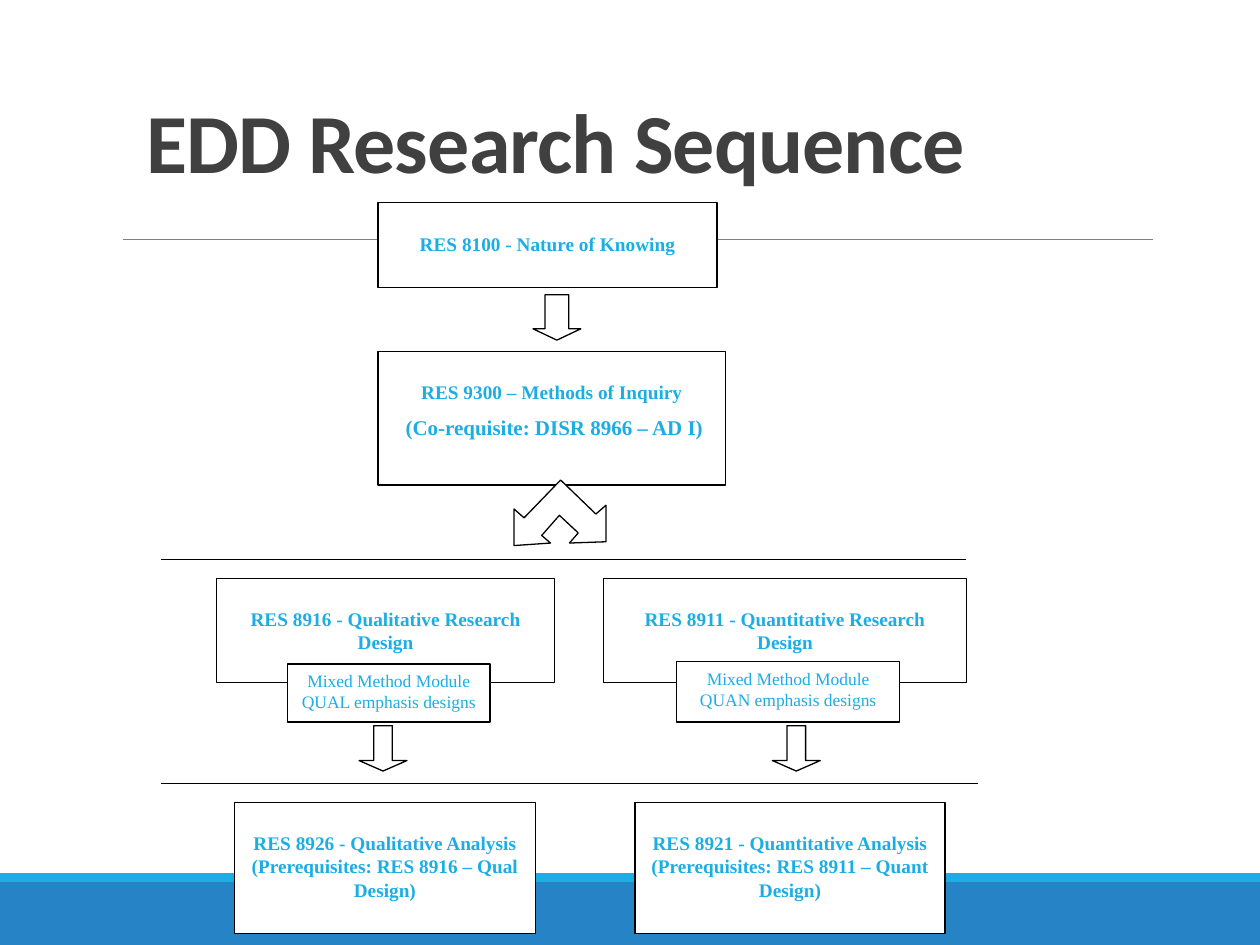
import pptx
import pptx.dml.color
import pptx.enum.shapes
import pptx.enum.text
import pptx.oxml
import pptx.oxml.ns
import pptx.util

PX = 9144
BLUE = "1CADE4"
BLACK = "000000"
WHITE = "FFFFFF"
SHAPES = pptx.enum.shapes.MSO_SHAPE
ALIGN = pptx.enum.text.PP_ALIGN
ANCHOR = pptx.enum.text.MSO_ANCHOR


def color(value):
    return pptx.dml.color.RGBColor.from_string(value)


def style_shape(shape, fill, line=None):
    shape.shadow.inherit = False
    shape.fill.solid()
    shape.fill.fore_color.rgb = color(fill)
    if line is None:
        shape.line.fill.background()
    else:
        shape.line.color.rgb = color(line)
        shape.line.width = pptx.util.Pt(0.75)


def format_font(font, name, size, value, bold):
    font.name = name
    font.size = pptx.util.Pt(size)
    font.bold = bold
    font.color.rgb = color(value)


def add_shape(slide, kind, box, fill=WHITE, line=BLACK):
    shape = slide.shapes.add_shape(kind, *(value * PX for value in box))
    style_shape(shape, fill, line)
    return shape


def add_rule(slide, left, right, y, value=BLACK, width=0.75):
    connector = slide.shapes.add_connector(
        pptx.enum.shapes.MSO_CONNECTOR.STRAIGHT,
        left * PX, y * PX, right * PX, y * PX)
    connector.line.color.rgb = color(value)
    connector.line.width = pptx.util.Pt(width)
    properties = connector.element.find(pptx.oxml.ns.qn("p:spPr"))
    pptx.oxml.xmlchemy.OxmlElement
    properties.append(pptx.oxml.parse_xml(
        '<a:effectLst xmlns:a="http://schemas.openxmlformats.org/drawingml/2006/main"/>'))


def add_box(slide, box, lines, sizes=(11, 11), bold=True, top=23):
    shape = add_shape(slide, SHAPES.RECTANGLE, box)
    frame = shape.text_frame
    frame.text = "\n".join(lines)
    frame.word_wrap = True
    frame.vertical_anchor = ANCHOR.TOP
    frame.margin_top = top * PX
    for paragraph, size in zip(frame.paragraphs, sizes):
        paragraph.alignment = ALIGN.CENTER
        format_font(paragraph.runs[0].font, "Times New Roman", size, BLUE, bold)
    return shape


def add_arrow(slide, left, top, shaft, head):
    arrow = add_shape(slide, SHAPES.DOWN_ARROW, (left, top, 38, 36))
    arrow.adjustments[0] = shaft
    arrow.adjustments[1] = head


def draw_backdrop(slide, width, height):
    add_shape(slide, SHAPES.RECTANGLE, (0, height - 50, width, 50), "2683C6", None)
    add_shape(slide, SHAPES.RECTANGLE, (0, height - 57, width, 7), BLUE, None)
    add_rule(slide, 98, 915, 190, "808080", 0.5)


def draw_title(slide, box, text):
    title = slide.shapes.title
    title.left, title.top, title.width, title.height = (value * PX for value in box)
    frame = title.text_frame
    frame.text = text
    frame.word_wrap = True
    frame.vertical_anchor = ANCHOR.BOTTOM
    paragraph = frame.paragraphs[0]
    paragraph.alignment = ALIGN.LEFT
    paragraph.line_spacing = 0.85
    font = paragraph.runs[0].font
    format_font(font, "Calibri", 48, "404040", True)
    paragraph.runs[0].font._element.set("spc", "-50")


def draw_fork(slide, left, top):
    outline = [(0, 52), (29, 50), (22, 44), (36, 28), (51, 42), (44, 50),
               (73, 49), (73, 20), (65, 27), (37, 0), (8, 30), (0, 23)]
    points = [(left + x, top + y) for x, y in outline]
    builder = slide.shapes.build_freeform(*points[0], scale=PX)
    builder.add_line_segments(points[1:], close=True)
    style_shape(builder.convert_to_shape(), WHITE, BLACK)


def draw_shared_courses(slide, left, top):
    add_box(slide, (left, top, 269, 67), ["RES 8100 - Nature of Knowing"])
    add_arrow(slide, left + 123, top + 73, 0.5, 0.25)
    inquiry = add_box(
        slide, (left, top + 118, 276, 106),
        ["RES 9300 – Methods of Inquiry", " (Co-requisite: DISR 8966 – AD I)"], (11, 12))
    inquiry.text_frame.paragraphs[1].space_before = pptx.util.Pt(6)
    draw_fork(slide, left + 108, top + 220)


def draw_track(slide, left, top, widths, module, offsets, texts):
    design_width, analysis_width = widths
    arrow_offset, analysis_offset = offsets
    module_left, module_top, module_width, module_height = module
    design, emphasis, analysis, prerequisite = texts
    add_box(slide, (left, top, design_width, 83), [design])
    add_box(slide, (left + module_left, top + module_top, module_width, module_height),
            [f"Mixed Method Module {emphasis} emphasis designs"], (10,), False, 5)
    add_arrow(slide, left + arrow_offset, top + 117, 0.39, 0.23)
    add_box(slide, (left + analysis_offset, top + 178, analysis_width, 104),
            [analysis, f"(Prerequisites: {prerequisite} Design)"])


def main():
    presentation = pptx.Presentation()
    presentation.slide_width = 1000 * PX
    presentation.slide_height = 750 * PX
    slide = presentation.slides.add_slide(presentation.slide_layouts[5])
    draw_backdrop(slide, 1000, 750)
    draw_title(slide, (106, 11, 862, 145), "EDD Research Sequence")
    draw_shared_courses(slide, 300, 161)
    add_rule(slide, 128, 767, 444)
    add_rule(slide, 128, 776, 622)
    draw_track(slide, 172, 459, (268, 239), (56, 68, 161, 46), (113, 14),
               ("RES 8916 - Qualitative Research Design", "QUAL",
                "RES 8926 - Qualitative Analysis", "RES 8916 – Qual"))
    draw_track(slide, 479, 459, (288, 246), (58, 66, 177, 48), (134, 25),
               ("RES 8911 - Quantitative Research Design", "QUAN",
                "RES 8921 - Quantitative Analysis", "RES 8911 – Quant"))
    presentation.save("out.pptx")


if __name__ == "__main__":
    main()
